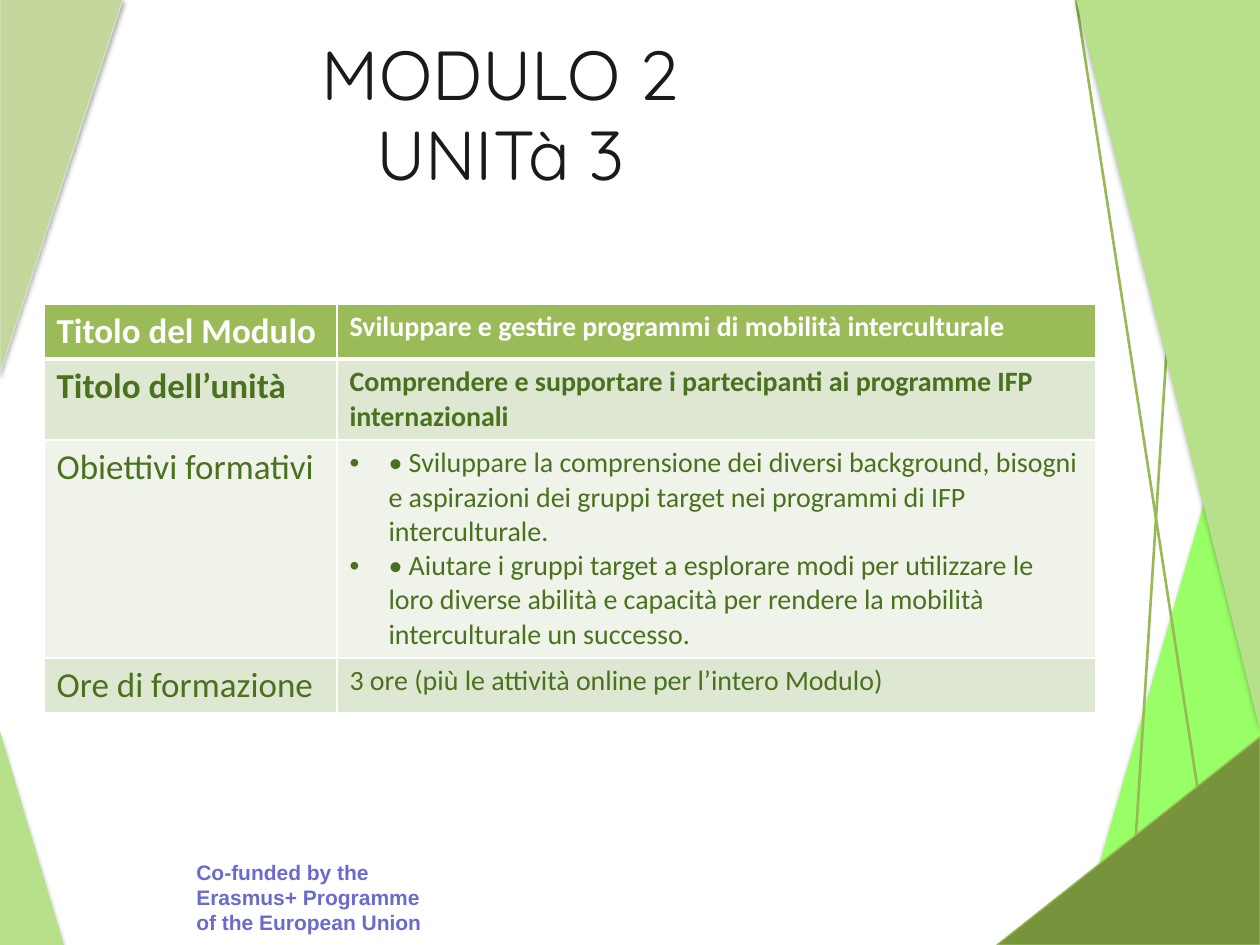
from lxml import etree
from pptx import Presentation
from pptx.dml.color import RGBColor
from pptx.enum.shapes import MSO_CONNECTOR, MSO_SHAPE
from pptx.enum.text import MSO_ANCHOR, MSO_AUTO_SIZE, PP_ALIGN
from pptx.oxml.ns import qn
from pptx.util import Emu, Pt

TRIANGLE = MSO_SHAPE.RIGHT_TRIANGLE
STRAIGHT = MSO_CONNECTOR.STRAIGHT
CENTER = PP_ALIGN.CENTER
MIDDLE = MSO_ANCHOR.MIDDLE
NO_FIT, GROW = MSO_AUTO_SIZE.NONE, MSO_AUTO_SIZE.SHAPE_TO_FIT_TEXT
EMU_PER_PX = 914400 / 126
EMU_PER_PT = 12700
WIDTH, HEIGHT = 1260, 945
COLORS = {
    "white": "FFFFFF", "black": "000000", "title": "1A1A1A",
    "funding": "6B6BCF", "neon": "99FF66", "light": "B7E08B",
    "sage": "C3D69B", "sage_edge": "D7E4BD", "olive": "77933C",
    "edge": "98B955", "header": "9BBB59", "band": "DEE7D1",
    "pale": "EFF3EA", "text": "49711E",
}
ROWS = [
    (55, "header", "white", True, "Titolo del Modulo",
     ["Sviluppare e gestire programmi di mobilità interculturale"]),
    (81, "band", "text", True, "Titolo dell’unità",
     ["Comprendere e supportare i partecipanti ai programme IFP internazionali"]),
    (218, "pale", "text", False, "Obiettivi formativi",
     ["• Sviluppare la comprensione dei diversi background, bisogni e "
      "aspirazioni dei gruppi target nei programmi di IFP interculturale.",
      "• Aiutare i gruppi target a esplorare modi per utilizzare le loro "
      "diverse abilità e capacità per rendere la mobilità interculturale "
      "un successo."]),
    (55, "band", "text", False, "Ore di formazione",
     ["3 ore (più le attività online per l’intero Modulo)"]),
]


def px(n):
    return Emu(round(n * EMU_PER_PX))


def rgb(name):
    return RGBColor.from_string(COLORS[name])


def add_color(parent, name):
    fill = etree.SubElement(parent, qn("a:solidFill"))
    return etree.SubElement(fill, qn("a:srgbClr"), val=COLORS[name])


def write(tf, paragraphs, size, color, font="Calibri", bold=False,
          align=None, bullet=False, spacing=None):
    for i, text in enumerate(paragraphs):
        p = tf.paragraphs[0] if i == 0 else tf.add_paragraph()
        if bullet:
            pPr = p._p.get_or_add_pPr()
            pPr.set("marL", str(px(39)))
            pPr.set("indent", str(-px(39)))
            etree.SubElement(pPr, qn("a:buFont"), typeface="Arial")
            etree.SubElement(pPr, qn("a:buChar"), char="•")
        if align is not None:
            p.alignment = align
        if spacing is not None:
            p.line_spacing = spacing
        for j, line in enumerate(text.split("\n")):
            if j:
                p.add_line_break()
            r = p.add_run()
            r.text = line
            r.font.name, r.font.size, r.font.bold = font, Pt(size), bold
            r.font.color.rgb = rgb(color)


def add_triangle(s, box, fill, flips="", edge=None, alpha=35, dist=1.8):
    sp = s.shapes.add_shape(TRIANGLE, *map(px, box))
    for axis in flips:
        sp._element.spPr.xfrm.set("flip" + axis, "1")
    sp.fill.solid()
    sp.fill.fore_color.rgb = rgb(fill)
    if edge:
        sp.line.color.rgb = rgb(edge)
        sp.line.width = Pt(0.75)
    else:
        sp.line.fill.background()
    sp.shadow.inherit = False
    effects = sp._element.spPr.find(qn("a:effectLst"))
    shadow = etree.SubElement(
        effects, qn("a:outerShdw"), blurRad=str(round(3.1 * EMU_PER_PT)),
        dist=str(round(dist * EMU_PER_PT)), dir="5400000", rotWithShape="0")
    color = etree.SubElement(shadow, qn("a:srgbClr"), val=COLORS["black"])
    etree.SubElement(color, qn("a:alpha"), val=str(alpha * 1000))


def add_line(s, start, end):
    line = s.shapes.add_connector(STRAIGHT, *map(px, start + end))
    line.line.color.rgb = rgb("edge")
    line.line.width = Pt(1.5)
    etree.SubElement(line._element.spPr, qn("a:effectLst"))


def add_left_decor(s, x, y, w, h):
    add_triangle(s, (x, y + h - 214, w - 59, 214), "light")
    add_triangle(s, (x, y - 1, w, 374), "sage", "V", "sage_edge")


def add_right_decor(s, x, y, w, h):
    add_triangle(s, (x + 79, y + 304, 186, h - 304), "neon", "H", alpha=38, dist=1.6)
    add_line(s, (x + 132, y + h), (x + 175, y + 265))
    add_line(s, (x + 219, y + 908), (x + 79, y - 1))
    add_triangle(s, (x + 79, y - 1, w - 79, 731), "light", "HV")
    add_triangle(s, (x, y + h - 208, w, 208), "olive", "H", "edge")


def add_funding(s, x, y, w, h):
    sp = s.shapes.add_textbox(px(x), px(y), px(w), px(h))
    tf = sp.text_frame
    tf.word_wrap = True
    tf.auto_size = GROW
    write(tf, ["Co-funded by the Erasmus+ Programme of the European Union"],
          12, "funding", font="Arial", bold=True)


def add_title(s, x, y, w, h):
    sp = s.shapes.title
    sp.left, sp.top, sp.width, sp.height = map(px, (x, y, w, h))
    tf = sp.text_frame
    tf.word_wrap = True
    tf.auto_size = NO_FIT
    tf.vertical_anchor = MIDDLE
    write(tf, ["MODULO 2\nUNITà 3"], 39.6, "title", font="Quicksand",
          align=CENTER, spacing=0.96)


def style_cell(cell, fill, bottom, top):
    tcPr = cell._tc.get_or_add_tcPr()
    for side, width in (("L", 1), ("R", 1), ("T", top), ("B", bottom)):
        border = etree.SubElement(tcPr, qn("a:ln" + side), w=str(width * EMU_PER_PT))
        add_color(border, "white")
    cell.fill.solid()
    cell.fill.fore_color.rgb = rgb(fill)


def add_unit_table(s, x, y, w, h):
    label_w = 293
    table = s.shapes.add_table(len(ROWS), 2, px(x), px(y), px(w), px(h)).table
    for column, width in zip(table.columns, (label_w, w - label_w)):
        column.width = px(width)
    for i, (height, fill, color, bold, label, details) in enumerate(ROWS):
        table.rows[i].height = px(height)
        for j, (paragraphs, size) in enumerate((([label], 20), (details, 16))):
            cell = table.cell(i, j)
            style_cell(cell, fill, 3 if i == 0 else 1, 3 if i == 1 else 1)
            write(cell.text_frame, paragraphs, size, color, bold=bold,
                  bullet=len(paragraphs) > 1)


def main():
    prs = Presentation()
    prs.slide_width, prs.slide_height = px(WIDTH), px(HEIGHT)
    s = prs.slides.add_slide(prs.slide_layouts[5])
    s.background.fill.solid()
    s.background.fill.fore_color.rgb = rgb("white")
    add_left_decor(s, 0, 0, 123, HEIGHT)
    add_right_decor(s, 997, 0, 263, HEIGHT)
    add_funding(s, 184, 853, 252, 89)
    add_title(s, 93, 38, 815, 158)
    add_unit_table(s, 44, 304, 1052, sum(row[0] for row in ROWS))
    prs.save("out.pptx")


if __name__ == "__main__":
    main()
